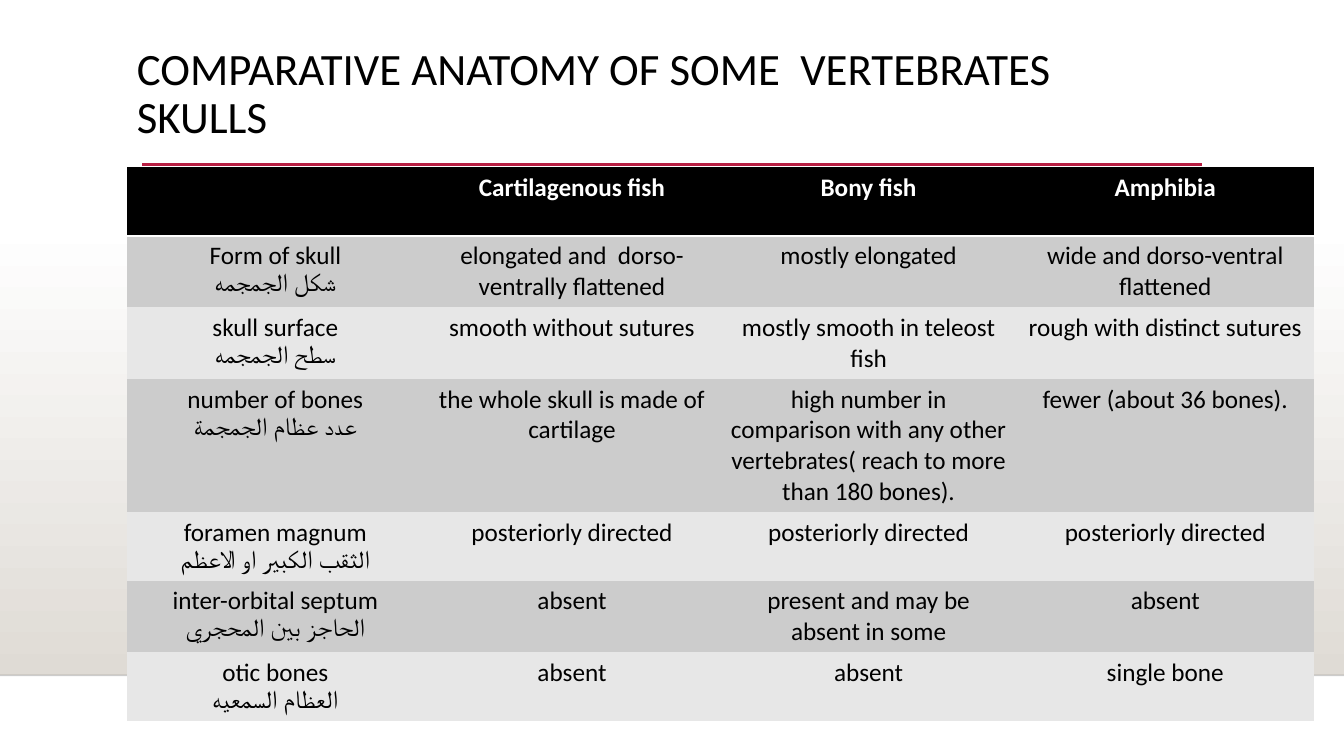
from typing import NamedTuple

from lxml.etree import SubElement
from pptx import Presentation
from pptx.dml.color import RGBColor
from pptx.enum.shapes import MSO_CONNECTOR, MSO_SHAPE
from pptx.enum.text import MSO_ANCHOR, PP_ALIGN
from pptx.oxml import parse_xml
from pptx.oxml.ns import nsdecls, qn
from pptx.util import Inches, Pt

BLACK = RGBColor(0x00, 0x00, 0x00)
WHITE = RGBColor(0xFF, 0xFF, 0xFF)
SAND = RGBColor(0xDF, 0xDB, 0xD5)
RED = RGBColor(0xB7, 0x1E, 0x42)
DARK = RGBColor(0xCC, 0xCC, 0xCC)
LIGHT = RGBColor(0xE7, 0xE7, 0xE7)
FONT = "Calibri"
PLAIN = "{2D5ABB26-0587-4C30-8999-92F81FD0307C}"
ROW = 0.68


class Rule(NamedTuple):
    left: float
    right: float
    top: float
    color: RGBColor
    width: float
    alpha: int


class Trait(NamedTuple):
    name: str
    shark: str
    bony: str
    frog: str


RULES = [
    Rule(0, 13.33, 6.7, BLACK, 1, 20),
    Rule(1.41, 11.92, 1.63, RED, 2.5, 100),
]

TRAITS = [
    Trait("", "Cartilagenous fish", "Bony fish", "Amphibia"),
    Trait("Form of skull\nشكل الجمجمه", "elongated and  dorso-ventrally flattened",
          "mostly elongated", "wide and dorso-ventral flattened"),
    Trait("skull surface\nسطح الجمجمه", "smooth without sutures",
          "mostly smooth in teleost fish", "rough with distinct sutures"),
    Trait("number of bones\nعدد عظام الجمجمة", "the whole skull is made of cartilage",
          "high number in comparison with any other vertebrates( reach to more than 180 bones).",
          "fewer (about 36 bones)."),
    Trait("foramen magnum\nالثقب الكبير او الاعظم", "posteriorly directed",
          "posteriorly directed", "posteriorly directed"),
    Trait("inter-orbital septum\nالحاجز بين المحجري", "absent",
          "present and may be absent in some", "absent"),
    Trait("otic bones\nالعظام السمعيه", "absent", "absent", "single bone"),
]


def style(frame, size: float, color: RGBColor, bold: bool = False) -> None:
    for para in frame.paragraphs:
        for run in para.runs:
            run.font.name = FONT
            run.font.size = Pt(size)
            run.font.bold = bold
            run.font.color.rgb = color


def add_floor(slide) -> None:
    floor = slide.shapes.add_shape(
        MSO_SHAPE.RECTANGLE, 0, Inches(2.21), Inches(13.33), Inches(4.49))
    floor.shadow.inherit = False
    floor.line.fill.background()
    floor.fill.gradient()
    floor.fill.gradient_angle = 270
    for stop, color in zip(floor.fill.gradient_stops, (WHITE, SAND)):
        stop.color.rgb = color


def add_rule(slide, rule: Rule) -> None:
    top = Inches(rule.top)
    line = slide.shapes.add_connector(
        MSO_CONNECTOR.STRAIGHT, Inches(rule.left), top, Inches(rule.right), top)
    line.line.color.rgb = rule.color
    line.line.width = Pt(rule.width)
    props = line._element.spPr
    if rule.alpha < 100:
        color = props.find(".//" + qn("a:srgbClr"))
        SubElement(color, qn("a:alpha")).set("val", str(rule.alpha * 1000))
    SubElement(props, qn("a:effectLst"))


def add_title(slide) -> None:
    box = slide.shapes.add_textbox(Inches(1.26), Inches(0.41), Inches(10.5), Inches(1.15))
    frame = box.text_frame
    frame.word_wrap = True
    frame.vertical_anchor = MSO_ANCHOR.TOP
    frame.text = "COMPARATIVE ANATOMY OF SOME  VERTEBRATES SKULLS"
    frame.paragraphs[0].line_spacing = 0.9
    style(frame, 32, BLACK)


def add_edge(cell) -> None:
    edge = parse_xml(
        f'<a:lnB {nsdecls("a")} w="25400"><a:solidFill>'
        f'<a:srgbClr val="{WHITE}"/></a:solidFill></a:lnB>')
    cell._tc.get_or_add_tcPr().insert(0, edge)


def fill_cell(cell, text: str, row: int) -> None:
    head = row == 0
    cell.fill.solid()
    cell.fill.fore_color.rgb = BLACK if head else DARK if row % 2 else LIGHT
    cell.text_frame.text = text
    for para in cell.text_frame.paragraphs:
        para.alignment = PP_ALIGN.CENTER
    style(cell.text_frame, 18, WHITE if head else BLACK, head)
    if head:
        add_edge(cell)


def add_grid(slide) -> None:
    count = len(TRAITS)
    frame = slide.shapes.add_table(
        count, 4, Inches(1.26), Inches(1.66), Inches(11.77), Inches(ROW * count))
    table = frame.table
    table.horz_banding = False
    table._tbl.tblPr.find(qn("a:tableStyleId")).text = PLAIN
    for row, trait in enumerate(TRAITS):
        table.rows[row].height = Inches(ROW)
        for col, text in enumerate(trait):
            fill_cell(table.cell(row, col), text, row)


def main() -> None:
    deck = Presentation()
    deck.slide_width = Inches(13.33)
    deck.slide_height = Inches(7.5)
    slide = deck.slides.add_slide(deck.slide_layouts[6])
    add_floor(slide)
    for rule in RULES:
        add_rule(slide, rule)
    add_grid(slide)
    add_title(slide)
    deck.save("out.pptx")


if __name__ == "__main__":
    main()
